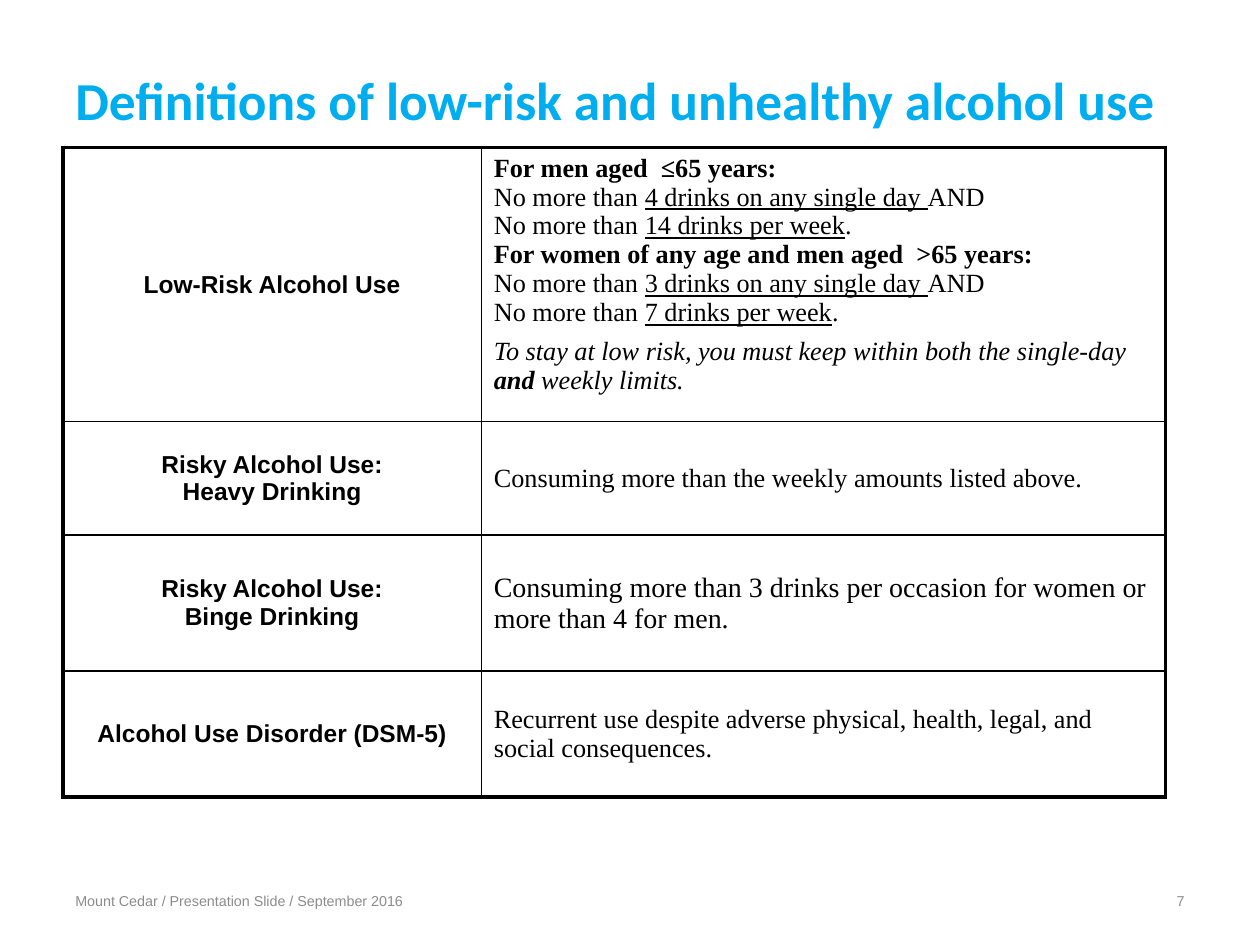
from dataclasses import dataclass
from lxml.etree import SubElement
from pptx import Presentation
from pptx.dml.color import RGBColor
from pptx.enum.text import MSO_ANCHOR, PP_ALIGN
from pptx.oxml.ns import qn
from pptx.util import Inches, Pt


@dataclass(frozen=True)
class Theme:
    ink: str = "000000"
    blue: str = "00AEEF"
    grey: str = "8C8C8C"
    sans: str = "Arial"
    serif: str = "Times New Roman"
    head: str = "Calibri"
    title: float = 30.5
    label: float = 14
    body: float = 15
    large: float = 16
    foot: float = 8.2
    gap: float = 5.5
    thick: float = 2.25
    thin: float = 1


THEME = Theme()
COLS = [3.32, 5.43]
ROWS = [1.97, 0.9, 1.08, 1]


def limits(group, day, week):
    return [
        [(f"{group}\n", "b"), ("No more than ", ""),
         (f"{day} drinks on any single day ", "u"), ("AND", "")],
        [("No more than ", ""), (f"{week} drinks per week", "u"), (".", "")],
    ]


LOW = [
    *limits("For men aged  ≤65 years:", 4, 14),
    *limits("For women of any age and men aged  >65 years:", 3, 7),
    [("To stay at low risk, you must keep within both the single-day ", "i"),
     ("and", "bi"), (" weekly limits", "i"), (".", "i")],
]


def plain(text):
    return [[(text, "")]]


GRID = [
    ("Low-Risk Alcohol Use", LOW, THEME.body),
    ("Risky Alcohol Use:\nHeavy Drinking",
     plain("Consuming more than the weekly amounts listed above."), THEME.body),
    ("Risky Alcohol Use:\nBinge Drinking",
     plain("Consuming more than 3 drinks per occasion for women "
           "or more than 4 for men."), THEME.large),
    ("Alcohol Use Disorder (DSM-5)",
     plain("Recurrent use despite adverse physical, health, legal, "
           "and social consequences."), THEME.body),
]


def add_run(para, text, marks, face, size, color):
    for i, line in enumerate(text.split("\n")):
        if i:
            para.add_line_break()
        if not line:
            continue
        run = para.add_run()
        run.text = line
        font = run.font
        font.name, font.size = face, Pt(size)
        font.color.rgb = RGBColor.from_string(color)
        font.bold = "b" in marks
        font.italic = "i" in marks
        font.underline = "u" in marks


def fill_text(frame, paras, face, size, color, align=PP_ALIGN.LEFT):
    frame.word_wrap = True
    for i, runs in enumerate(paras):
        para = frame.add_paragraph() if i else frame.paragraphs[0]
        para.alignment = align
        for text, marks in runs:
            add_run(para, text, marks, face, size, color)


def add_label(slide, box, runs, face, size, color,
              align=PP_ALIGN.LEFT, anchor=MSO_ANCHOR.MIDDLE):
    frame = slide.shapes.add_textbox(*map(Inches, box)).text_frame
    frame.vertical_anchor = anchor
    fill_text(frame, [runs], face, size, color, align)


def set_edges(cell, row, col):
    props = cell._tc.get_or_add_tcPr()
    edges = {
        "lnL": col == 0,
        "lnR": col == len(COLS) - 1,
        "lnT": row == 0,
        "lnB": row == len(ROWS) - 1,
    }
    for tag, outer in edges.items():
        width = Pt(THEME.thick if outer else THEME.thin)
        line = SubElement(props, qn(f"a:{tag}"), w=str(width))
        solid = SubElement(line, qn("a:solidFill"))
        SubElement(solid, qn("a:srgbClr"), val=THEME.ink)
    cell.fill.background()


def add_grid(slide):
    box = map(Inches, (0.5, 1.17, sum(COLS), sum(ROWS)))
    table = slide.shapes.add_table(len(ROWS), len(COLS), *box).table
    table.first_row = table.horz_banding = False
    for col, width in zip(table.columns, COLS):
        col.width = Inches(width)
    for r, (label, paras, size) in enumerate(GRID):
        table.rows[r].height = Inches(ROWS[r])
        left, right = table.cell(r, 0), table.cell(r, 1)
        for c, cell in enumerate((left, right)):
            cell.vertical_anchor = MSO_ANCHOR.MIDDLE
            set_edges(cell, r, c)
        fill_text(left.text_frame, [[(label, "b")]], THEME.sans,
                  THEME.label, THEME.ink, PP_ALIGN.CENTER)
        fill_text(right.text_frame, paras, THEME.serif, size, THEME.ink)
    low = table.cell(0, 1)
    low.vertical_anchor = MSO_ANCHOR.TOP
    low.text_frame.paragraphs[-1].space_before = Pt(THEME.gap)


def main():
    deck = Presentation()
    deck.slide_width, deck.slide_height = Inches(10), Inches(7.5)
    slide = deck.slides.add_slide(deck.slide_layouts[6])
    add_label(slide, (0.5, 0.48, 9, 0.68),
              [("Definitions of low-risk and unhealthy alcohol use", "b")],
              THEME.head, THEME.title, THEME.blue, anchor=MSO_ANCHOR.TOP)
    add_label(slide, (0.5, 6.95, 3.17, 0.4),
              [("Mount Cedar / Presentation Slide / September 2016", "")],
              THEME.sans, THEME.foot, THEME.grey)
    add_label(slide, (7.17, 6.95, 2.33, 0.4), [("7", "")],
              THEME.sans, THEME.foot, THEME.grey, PP_ALIGN.RIGHT)
    add_grid(slide)
    deck.save("out.pptx")


if __name__ == "__main__":
    main()
